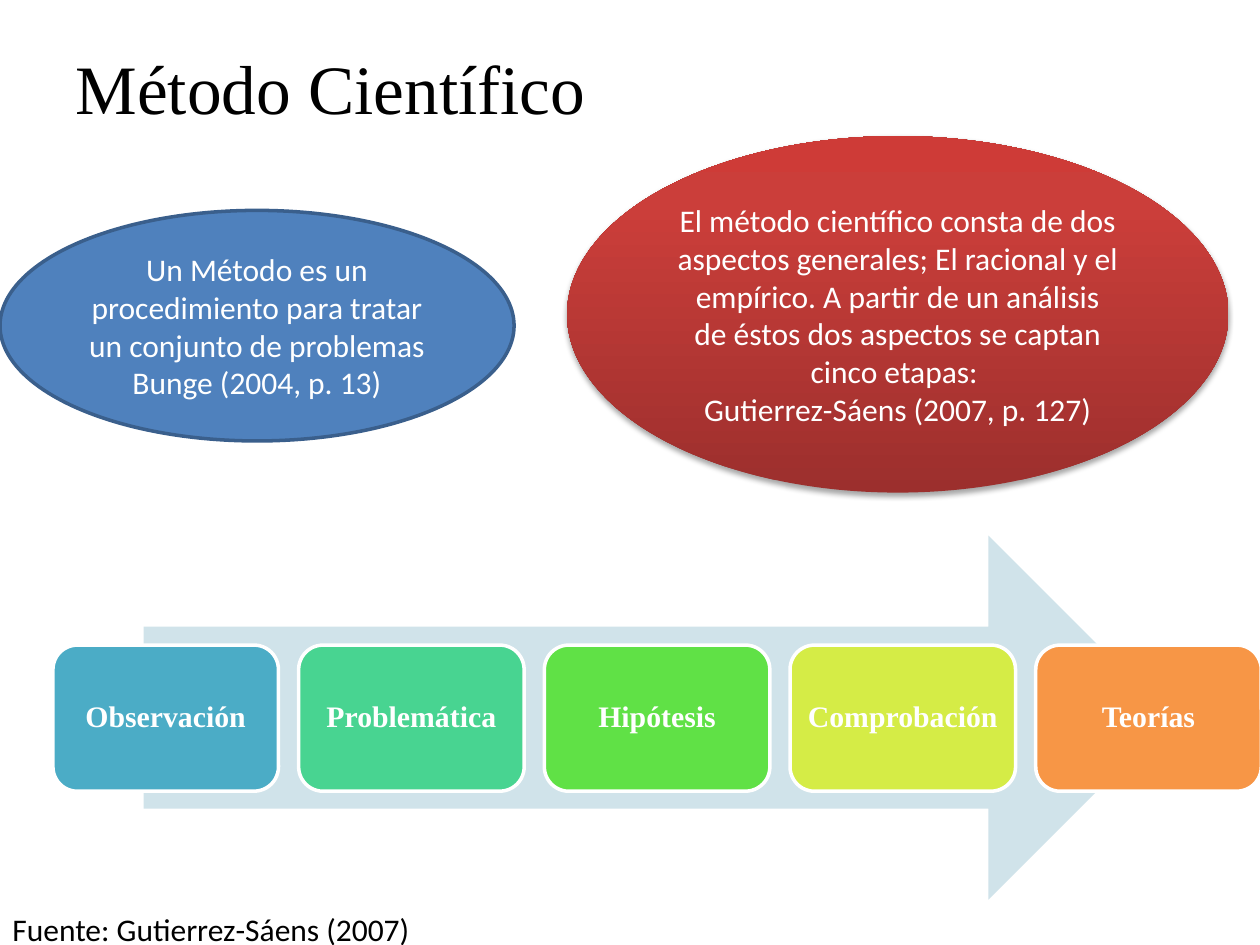
from copy import deepcopy

from lxml.etree import SubElement
from pptx import Presentation
from pptx.dml.color import RGBColor
from pptx.enum.shapes import MSO_SHAPE as SHAPE
from pptx.enum.text import MSO_ANCHOR as ANCHOR, MSO_AUTO_SIZE as AUTO, PP_ALIGN as ALIGN
from pptx.oxml.ns import qn
from pptx.util import Inches, Pt

WHITE = RGBColor(0xFF, 0xFF, 0xFF)
BLACK = RGBColor(0x00, 0x00, 0x00)
BLUE = RGBColor(0x4F, 0x81, 0xBD)
BLUE_EDGE = RGBColor(0x3A, 0x5F, 0x8C)
ARROW = RGBColor(0xD0, 0xE3, 0xEA)
RED_STOPS = [
    (0, RGBColor(0x9C, 0x2F, 0x2D)),
    (0.8, RGBColor(0xCB, 0x3E, 0x3A)),
    (1, RGBColor(0xCE, 0x3B, 0x37)),
]
STAGES = [
    ("Observación", RGBColor(0x4B, 0xAC, 0xC6)),
    ("Problemática", RGBColor(0x48, 0xD4, 0x91)),
    ("Hipótesis", RGBColor(0x60, 0xE1, 0x46)),
    ("Comprobación", RGBColor(0xD5, 0xEC, 0x46)),
    ("Teorías", RGBColor(0xF7, 0x96, 0x46)),
]
SERIF, SANS = "Times New Roman", "Calibri"


def add_shape(kind, left, top, width, height, fill=None, line=None):
    sp = s.shapes.add_shape(kind, Inches(left), Inches(top), Inches(width), Inches(height))
    sp.shadow.inherit = False
    if fill is not None:
        sp.fill.solid()
        sp.fill.fore_color.rgb = fill
    if line is None:
        sp.line.fill.background()
    else:
        sp.line.color.rgb = line
        sp.line.width = Pt(2)
    return sp


def write(tf, lines, font, size, color, align=ALIGN.CENTER, bold=False):
    tf.word_wrap = True
    for i, text in enumerate(lines):
        p = tf.paragraphs[0] if i == 0 else tf.add_paragraph()
        p.alignment = align
        r = p.add_run()
        r.text = text
        r.font.name, r.font.size, r.font.bold = font, Pt(size), bold
        r.font.color.rgb = color


prs = Presentation()
prs.slide_width, prs.slide_height = Inches(10), Inches(7.5)
s = prs.slides.add_slide(prs.slide_layouts[5])

# Title
title = s.shapes.title
title.left, title.top, title.width, title.height = map(Inches, (0.5, 0.3, 9, 0.78))
title.text_frame.vertical_anchor = ANCHOR.MIDDLE
write(title.text_frame, ["Método Científico"], SERIF, 39.6, BLACK, ALIGN.LEFT)

# Definition
definition = add_shape(SHAPE.OVAL, 0, 1.67, 4.08, 1.83, BLUE, BLUE_EDGE)
write(definition.text_frame,
      ["Un Método es un procedimiento para tratar un conjunto de problemas Bunge (2004, p. 13)"],
      SANS, 18, WHITE)

# Aspects: three-stop gradient and a soft shadow
aspects = add_shape(SHAPE.OVAL, 4.5, 1.08, 5.25, 2.83)
aspects.fill.gradient()
aspects.fill.gradient_angle = 90
stop_list = aspects._element.spPr.find(".//" + qn("a:gsLst"))
stop_list.append(deepcopy(stop_list[0]))
for stop, (position, color) in zip(aspects.fill.gradient_stops, RED_STOPS):
    stop.position = position
    stop.color.rgb = color
effects = aspects._element.spPr.find(qn("a:effectLst"))
shadow = SubElement(effects, qn("a:outerShdw"), blurRad=str(Pt(3.1)), dist=str(Pt(1.8)),
                    dir="5400000", rotWithShape="0")
shade = SubElement(shadow, qn("a:srgbClr"), val="000000")
SubElement(shade, qn("a:alpha"), val="35000")
write(aspects.text_frame,
      ["El método científico consta de dos aspectos generales; El racional y el empírico. "
       "A partir de un análisis de éstos dos aspectos se captan cinco etapas: ",
       "Gutierrez-Sáens (2007, p. 127)"],
      SANS, 18, WHITE)

# Stages along the arrow
add_shape(SHAPE.RIGHT_ARROW, 1.14, 4.25, 8.15, 2.89, ARROW)
LEFT, PITCH = 0.42, 1.95
for i, (name, color) in enumerate(STAGES):
    sp = add_shape(SHAPE.ROUNDED_RECTANGLE, LEFT + i * PITCH, 5.12, 1.79, 1.16, color, WHITE)
    tf = sp.text_frame
    tf.margin_left = tf.margin_right = tf.margin_top = tf.margin_bottom = Inches(0.07)
    write(tf, [name], SERIF, 17, WHITE, bold=True)
    tf.paragraphs[0].line_spacing = 0.9

# Source
source = s.shapes.add_textbox(0, Inches(7.17), Inches(3.58), Inches(0.71))
write(source.text_frame, ["Fuente: Gutierrez-Sáens (2007)"], SANS, 18, BLACK, ALIGN.LEFT)
source.text_frame.auto_size = AUTO.SHAPE_TO_FIT_TEXT

prs.save("out.pptx")
